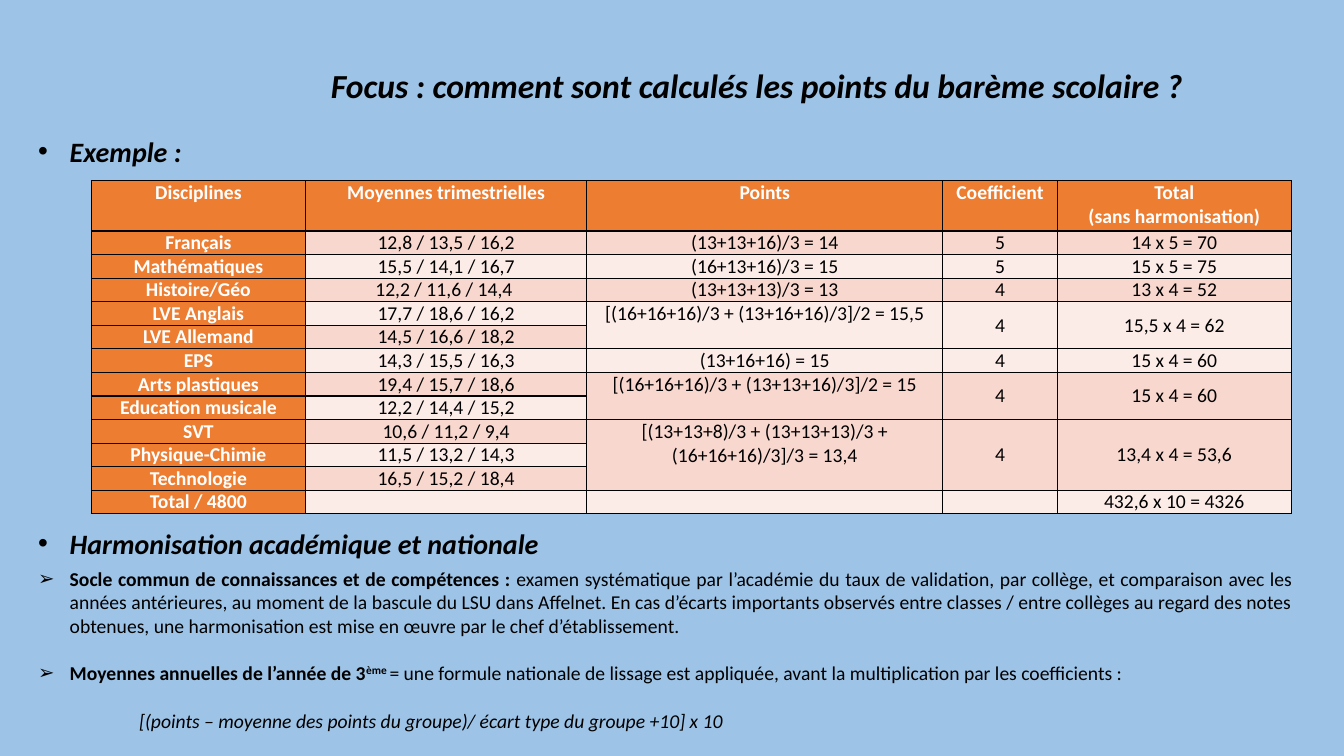
from lxml.etree import SubElement
from pptx import Presentation
from pptx.dml.color import RGBColor
from pptx.enum.text import MSO_ANCHOR, PP_ALIGN
from pptx.oxml.ns import qn
from pptx.util import Pt

PX = 9525
THEME = {
    "font": "Calibri",
    "background": "9DC3E6",
    "text": "000000",
    "header_text": "FFFFFF",
    "header_fill": "ED7D31",
    "bands": ("FCECE8", "F8D7CE"),
    "border": "000000",
    "title_size": 24,
    "heading_size": 20,
    "body_size": 14,
}


def add_text(paragraph, text, size=THEME["body_size"], color=THEME["text"],
             bold=False, italic=False, baseline=0):
    """Append one formatted run; baseline is the raise in percent."""
    run = paragraph.add_run()
    run.text = text
    run.font.name = THEME["font"]
    run.font.size = Pt(size)
    run.font.bold = bold
    run.font.italic = italic
    run.font.color.rgb = RGBColor.from_string(color)
    if baseline:
        run.font._element.set("baseline", str(baseline * 1000))


def add_textbox(slide, left, top, width, height):
    box = slide.shapes.add_textbox(left * PX, top * PX, width * PX, height * PX)
    box.text_frame.word_wrap = True
    return box.text_frame


presentation = Presentation()
presentation.slide_width = 1280 * PX
presentation.slide_height = 720 * PX
slide = presentation.slides.add_slide(presentation.slide_layouts[6])
slide.background.fill.solid()
slide.background.fill.fore_color.rgb = RGBColor.from_string(THEME["background"])

# Body: space before (points), left margin and hanging indent (px), bullet, runs
heading = {"size": THEME["heading_size"], "bold": True, "italic": True}
body_paragraphs = [
    (0, 30, -30, "•", [("Exemple :", heading)]),
    (256, 30, -30, "•", [("Harmonisation académique et nationale", heading)]),
    (5, 30, -30, "➢", [
        ("Socle commun de connaissances et de compétences : ", {"bold": True}),
        ("examen systématique par l’académie du taux de validation, par collège, et "
         "comparaison avec les années antérieures, au moment de la bascule du LSU dans "
         "Affelnet. En cas d’écarts importants observés entre classes / entre collèges "
         "au regard des notes obtenues, une harmonisation est mise en œuvre par le chef "
         "d’établissement.", {}),
    ]),
    (17, 30, -30, "➢", [
        ("Moyennes annuelles de l’année de 3", {"bold": True}),
        ("ème ", {"bold": True, "baseline": 30}),
        ("= une formule nationale de lissage est appliquée, avant la multiplication "
         "par les coefficients :", {}),
    ]),
    (17, 96, 0, None, [
        ("[(points – moyenne des points du groupe)/ écart type du groupe +10] x 10",
         {"italic": True}),
    ]),
]
body = add_textbox(slide, 27, 123, 1214, 597)
for index, (space, margin, indent, bullet, runs) in enumerate(body_paragraphs):
    paragraph = body.add_paragraph() if index else body.paragraphs[0]
    paragraph.alignment = PP_ALIGN.JUSTIFY
    if space:
        paragraph.space_before = Pt(space)
    properties = paragraph._p.get_or_add_pPr()
    properties.set("marL", str(margin * PX))
    properties.set("indent", str(indent * PX))
    if bullet:
        SubElement(properties, qn("a:buFont"), typeface="Arial")
        SubElement(properties, qn("a:buChar"), char=bullet)
    for text, text_format in runs:
        add_text(paragraph, text, **text_format)

title = add_textbox(slide, 224, 31, 1001, 74)
title.vertical_anchor = MSO_ANCHOR.BOTTOM
title.paragraphs[0].alignment = PP_ALIGN.CENTER
title.paragraphs[0].line_spacing = 0.9
add_text(title.paragraphs[0], "Focus : comment sont calculés les points du barème scolaire ? ",
         size=THEME["title_size"], bold=True, italic=True)

# None continues the cell above
rows = [
    ("Disciplines", "Moyennes trimestrielles", "Points", "Coefficient",
     "Total\n(sans harmonisation)"),
    ("Français", "12,8 / 13,5 / 16,2", "(13+13+16)/3 = 14", "5", "14 x 5 = 70"),
    ("Mathématiques", "15,5 / 14,1 / 16,7", "(16+13+16)/3 = 15", "5", "15 x 5 = 75"),
    ("Histoire/Géo", "12,2 / 11,6 / 14,4 ", "(13+13+13)/3 = 13", "4", "13 x 4 = 52"),
    ("LVE Anglais", "17,7 / 18,6 / 16,2", "[(16+16+16)/3 + (13+16+16)/3]/2 = 15,5", "4",
     "15,5 x 4 = 62"),
    ("LVE Allemand", "14,5 / 16,6 / 18,2", None, None, None),
    ("EPS", "14,3 / 15,5 / 16,3", "(13+16+16) = 15", "4", "15 x 4 = 60"),
    ("Arts plastiques", "19,4 / 15,7 / 18,6", "[(16+16+16)/3 + (13+13+16)/3]/2 = 15", "4",
     "15 x 4 = 60"),
    ("Education musicale", "12,2 / 14,4 / 15,2", None, None, None),
    ("SVT", "10,6 / 11,2 / 9,4", "[(13+13+8)/3 + (13+13+13)/3 + (16+16+16)/3]/3 = 13,4", "4",
     "13,4 x 4 = 53,6"),
    ("Physique-Chimie", "11,5 / 13,2 / 14,3", None, None, None),
    ("Technologie", "16,5 / 15,2 / 18,4", None, None, None),
    ("Total / 4800", "", "", "", "432,6 x 10 = 4326"),
]
column_widths = [204, 268, 339, 109, 223]
row_heights = [48] + [21] * (len(rows) - 1)
table = slide.shapes.add_table(len(rows), len(column_widths), 87 * PX, 172 * PX,
                               sum(column_widths) * PX, sum(row_heights) * PX).table
for column, width in zip(table.columns, column_widths):
    column.width = width * PX
for table_row, height in zip(table.rows, row_heights):
    table_row.height = height * PX

for row_index, row in enumerate(rows):
    for column_index, text in enumerate(row):
        cell = table.cell(row_index, column_index)
        is_header = row_index == 0 or column_index == 0
        cell.margin_left = cell.margin_right = 7 * PX
        cell.margin_top = cell.margin_bottom = 0
        if row_index and column_index > 2:
            cell.vertical_anchor = MSO_ANCHOR.MIDDLE
        for side in ("a:lnL", "a:lnR", "a:lnT", "a:lnB"):
            line = SubElement(cell._tc.get_or_add_tcPr(), qn(side), w=str(Pt(1)))
            SubElement(SubElement(line, qn("a:solidFill")), qn("a:srgbClr"), val=THEME["border"])
        fill = THEME["header_fill"] if is_header else THEME["bands"][row_index % 2]
        cell.fill.solid()
        cell.fill.fore_color.rgb = RGBColor.from_string(fill)

        paragraph = cell.text_frame.paragraphs[0]
        if not text:
            SubElement(paragraph._p, qn("a:endParaRPr"), sz=str(THEME["body_size"] * 100))
            continue
        for line_index, line_text in enumerate(text.split("\n")):
            if line_index:
                paragraph = cell.text_frame.add_paragraph()
            paragraph.alignment = PP_ALIGN.CENTER
            add_text(paragraph, line_text, bold=is_header,
                     color=THEME["header_text"] if is_header else THEME["text"])

        last_row = row_index
        while last_row + 1 < len(rows) and rows[last_row + 1][column_index] is None:
            last_row += 1
        if last_row > row_index:
            cell.merge(table.cell(last_row, column_index))

presentation.save("out.pptx")
